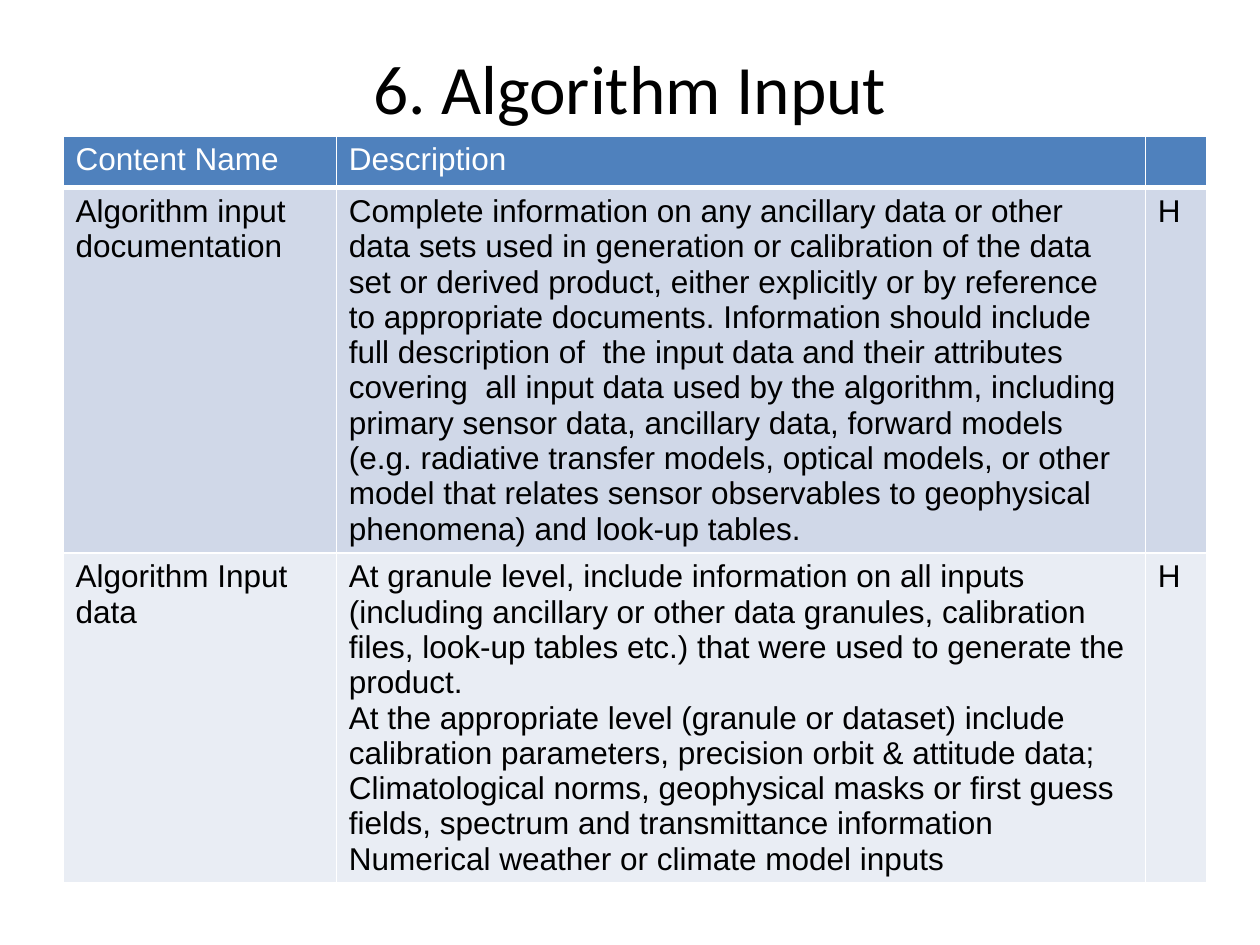
import pptx
import pptx.dml.color
import pptx.enum.text
import pptx.oxml
import pptx.oxml.ns
import pptx.util

W, H = 10, 7.5
COLORS = {
    "header": "4F81BD",
    "band": "D0D8E8",
    "light": "E9EDF4",
    "white": "FFFFFF",
    "text": "000000",
}
COLUMNS = [2.17, 6.42, 0.49]
HEIGHTS = [0.41, 2.9, 2.61]
FILLS = ["header", "band", "light"]
ROWS = [
    ["Content Name", "Description", ""],
    [
        "Algorithm input documentation",
        "Complete information on any ancillary data or other data sets used in "
        "generation or calibration of the data set or derived product, either "
        "explicitly or by reference to appropriate documents. Information should "
        "include full description of  the input data and their attributes covering  "
        "all input data used by the algorithm, including primary sensor data, "
        "ancillary data, forward models (e.g. radiative transfer models, optical "
        "models, or other model that relates sensor observables to geophysical "
        "phenomena) and look-up tables.",
        "H",
    ],
    [
        "Algorithm Input data",
        "At granule level, include information on all inputs (including ancillary "
        "or other data granules, calibration files, look-up tables etc.) that were "
        "used to generate the product.\n"
        "At the appropriate level (granule or dataset) include calibration "
        "parameters, precision orbit & attitude data; Climatological norms, "
        "geophysical masks or first guess fields, spectrum and transmittance "
        "information\n"
        "Numerical weather or climate model inputs",
        "H",
    ],
]


def rgb(name):
    return pptx.dml.color.RGBColor.from_string(COLORS[name])


def set_font(p, name, size, color):
    p.font.name = name
    p.font.size = pptx.util.Pt(size)
    p.font.color.rgb = rgb(color)


def set_borders(cell, bottom):
    tc_pr = cell._tc.get_or_add_tcPr()
    widths = {"L": 1, "R": 1, "T": 1, "B": bottom}
    for i, (side, width) in enumerate(widths.items()):
        ln = pptx.oxml.parse_xml(
            f'<a:ln{side} {pptx.oxml.ns.nsdecls("a")} w="{pptx.util.Pt(width)}">'
            f'<a:solidFill><a:srgbClr val="{COLORS["white"]}"/></a:solidFill>'
            f'</a:ln{side}>'
        )
        tc_pr.insert(i, ln)


def add_title(s, text):
    sp = s.shapes.title
    sp.left, sp.top = pptx.util.Inches(0.05 * W), pptx.util.Inches(0.04 * H)
    sp.width, sp.height = pptx.util.Inches(0.9 * W), pptx.util.Inches(0.78)
    tf = sp.text_frame
    tf.text = text
    tf.vertical_anchor = pptx.enum.text.MSO_ANCHOR.MIDDLE
    p = tf.paragraphs[0]
    p.alignment = pptx.enum.text.PP_ALIGN.CENTER
    set_font(p, "Calibri", 39.6, "text")


def fill_cell(cell, text, fill, color, bottom):
    cell.text = text
    cell.fill.solid()
    cell.fill.fore_color.rgb = rgb(fill)
    set_borders(cell, bottom)
    for p in cell.text_frame.paragraphs:
        set_font(p, "Arial", 18, color)
        p.font.bold = False


def add_content_table(s):
    box = [pptx.util.Inches(v) for v in (0.05 * W, 1.08, sum(COLUMNS), sum(HEIGHTS))]
    table = s.shapes.add_table(len(ROWS), len(COLUMNS), *box).table
    for column, width in zip(table.columns, COLUMNS):
        column.width = pptx.util.Inches(width)
    for i, (row, height) in enumerate(zip(table.rows, HEIGHTS)):
        row.height = pptx.util.Inches(height)
        color, bottom = ("white", 3) if i == 0 else ("text", 1)
        for cell, text in zip(row.cells, ROWS[i]):
            fill_cell(cell, text, FILLS[i], color, bottom)


def main():
    prs = pptx.Presentation()
    prs.slide_width, prs.slide_height = pptx.util.Inches(W), pptx.util.Inches(H)
    s = prs.slides.add_slide(prs.slide_layouts.get_by_name("Title Only"))
    add_title(s, "6. Algorithm Input")
    add_content_table(s)
    prs.save("out.pptx")


if __name__ == "__main__":
    main()
